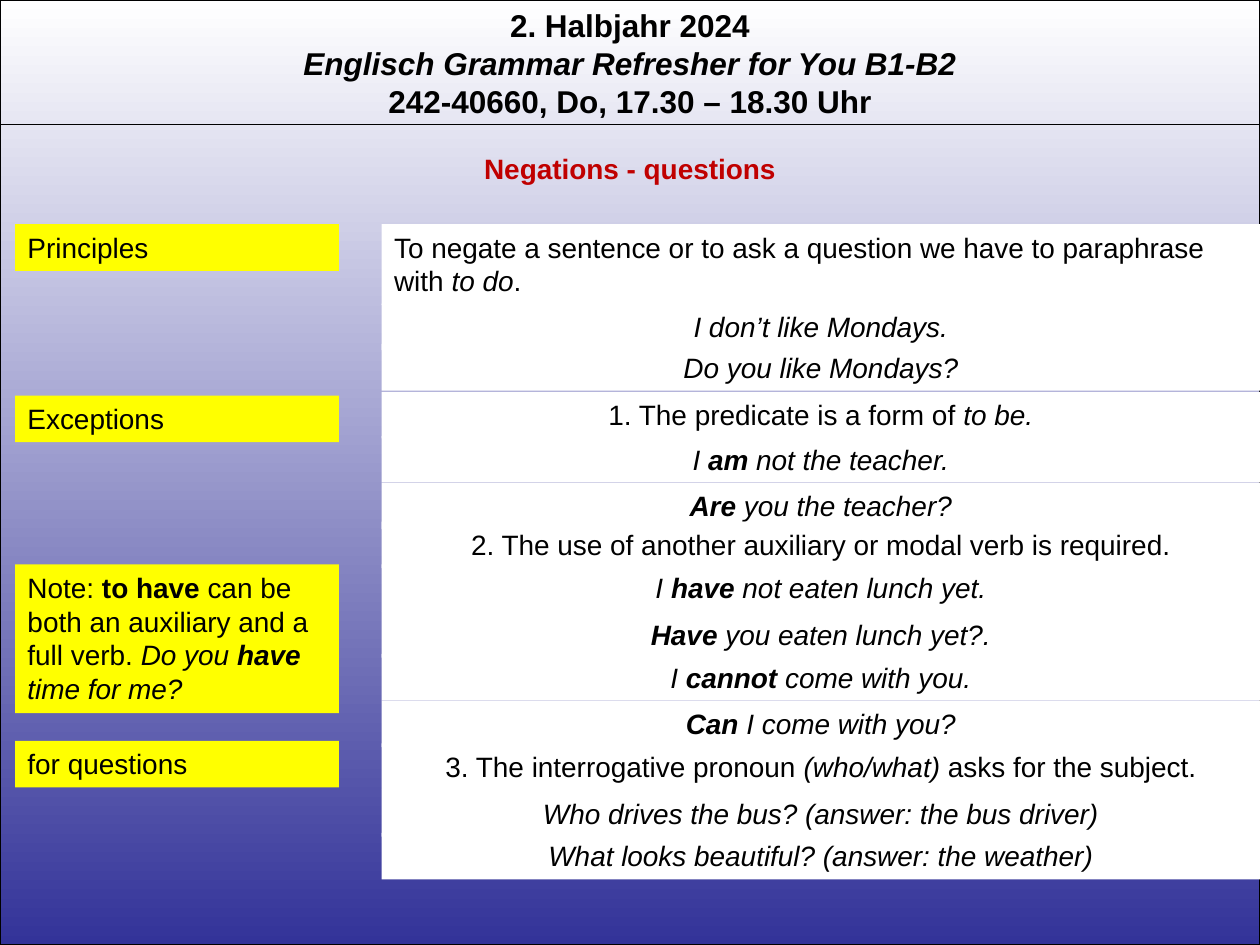
from dataclasses import dataclass

from lxml.etree import SubElement
from pptx import Presentation
from pptx.dml.color import RGBColor
from pptx.enum.shapes import MSO_CONNECTOR, MSO_SHAPE
from pptx.enum.text import MSO_ANCHOR, MSO_AUTO_SIZE, PP_ALIGN
from pptx.oxml.ns import qn
from pptx.util import Inches, Pt


@dataclass(frozen=True)
class Theme:
    font: str = "Arial"
    header_size: int = 18
    body_size: int = 16
    line_width: float = 0.75
    black: RGBColor = RGBColor(0x00, 0x00, 0x00)
    white: RGBColor = RGBColor(0xFF, 0xFF, 0xFF)
    blue: RGBColor = RGBColor(0x33, 0x33, 0x99)
    yellow: RGBColor = RGBColor(0xFF, 0xFF, 0x00)
    red: RGBColor = RGBColor(0xC0, 0x00, 0x00)


THEME = Theme()
SLIDE_W, SLIDE_H = 10, 7.5
LABEL_LEFT, LABEL_W = 0.12, 2.57
RULE_LEFT = 3.03
RULE_W = SLIDE_W - RULE_LEFT
LINE_H, PADDING = 0.27, 0.1

# A paragraph is a list of (text, style) runs; style holds "b" and/or "i".
HEADER = [
    [("2. Halbjahr 2024", "b")],
    [("Englisch Grammar Refresher for You B1-B2", "bi")],
    [("242-40660, Do, 17.30 – 18.30 Uhr", "b")],
]
TOPIC = [("Negations - questions", "b")]

# (top, number of lines, runs)
LABELS = [
    (1.78, 1, [("Principles", "")]),
    (3.14, 1, [("Exceptions", "")]),
    (4.48, 4, [("Note: ", ""), ("to have ", "b"),
               ("can be both an auxiliary and a full verb. ", ""),
               ("Do you ", "i"), ("have", "bi"), (" time for me?", "i")]),
    (5.88, 1, [("for questions", "")]),
]
PRINCIPLE = (1.78, 2, [
    ("To negate a sentence or to ask a question we have to paraphrase with ", ""),
    ("to do", "i"), (".", "")])
RULES = [
    (2.41, 1, [("I don’t like Mondays.", "i")]),
    (2.73, 1, [("Do you like Mondays?", "i")]),
    (3.11, 1, [("1. The predicate is a form of ", ""), ("to be.", "i")]),
    (3.46, 1, [("I ", "i"), ("am", "bi"), (" not the teacher.", "i")]),
    (3.83, 1, [("Are", "bi"), (" you the teacher?", "i")]),
    (4.14, 1, [("2. The use of another auxiliary or modal verb is required.", "")]),
    (4.48, 1, [("I ", "i"), ("have ", "bi"), ("not eaten lunch yet.", "i")]),
    (4.85, 1, [("Have ", "bi"), ("you eaten lunch yet?.", "i")]),
    (5.19, 1, [("I ", "i"), ("cannot ", "bi"), ("come with you.", "i")]),
    (5.56, 1, [("Can ", "bi"), ("I come with you?", "i")]),
    (5.90, 1, [("3. The interrogative pronoun ", ""), ("(who/what) ", "i"),
               ("asks for the subject.", "")]),
    (6.27, 1, [("Who drives the bus? (answer: the bus driver)", "i")]),
    (6.61, 1, [("What looks beautiful? (answer: the weather)", "i")]),
]


def write(shape, paragraphs, align, size=THEME.body_size, color=THEME.black):
    frame = shape.text_frame
    frame.word_wrap = True
    frame.auto_size = MSO_AUTO_SIZE.SHAPE_TO_FIT_TEXT
    frame.vertical_anchor = MSO_ANCHOR.TOP
    for index, runs in enumerate(paragraphs):
        paragraph = frame.paragraphs[0] if index == 0 else frame.add_paragraph()
        paragraph.alignment = align
        for text, style in runs:
            run = paragraph.add_run()
            run.text = text
            run.font.name = THEME.font
            run.font.size = Pt(size)
            run.font.color.rgb = color
            run.font.bold = "b" in style
            run.font.italic = "i" in style


def add_background(slide):
    background = slide.shapes.add_shape(
        MSO_SHAPE.RECTANGLE, 0, 0, Inches(SLIDE_W), Inches(SLIDE_H))
    background.shadow.inherit = False
    background.fill.gradient()
    background.fill.gradient_angle = 270
    for stop, color in zip(background.fill.gradient_stops, (THEME.white, THEME.blue)):
        stop.color.rgb = color
    background.line.color.rgb = THEME.black
    background.line.width = Pt(THEME.line_width)


def add_heading(slide, top, height, paragraphs, **style):
    heading = slide.shapes.add_textbox(0, Inches(top), Inches(SLIDE_W), Inches(height))
    write(heading, paragraphs, PP_ALIGN.CENTER, **style)


def add_header_rule(slide, top):
    rule = slide.shapes.add_connector(
        MSO_CONNECTOR.STRAIGHT, 0, Inches(top), Inches(SLIDE_W), Inches(top))
    rule.line.color.rgb = THEME.black
    rule.line.width = Pt(THEME.line_width)
    SubElement(rule._element.spPr, qn("a:effectLst"))


def add_box(slide, left, width, entry, fill, align):
    top, lines, runs = entry
    box = slide.shapes.add_shape(
        MSO_SHAPE.RECTANGLE, Inches(left), Inches(top),
        Inches(width), Inches(lines * LINE_H + PADDING))
    box.shadow.inherit = False
    box.fill.solid()
    box.fill.fore_color.rgb = fill
    box.line.fill.background()
    write(box, [runs], align)


def main():
    deck = Presentation()
    deck.slide_width, deck.slide_height = Inches(SLIDE_W), Inches(SLIDE_H)
    slide = deck.slides.add_slide(deck.slide_layouts[6])

    add_background(slide)
    add_heading(slide, 0, 1.01, HEADER, size=THEME.header_size)
    add_header_rule(slide, 0.99)
    add_heading(slide, 1.15, 0.37, [TOPIC], color=THEME.red)
    for label in LABELS:
        add_box(slide, LABEL_LEFT, LABEL_W, label, THEME.yellow, PP_ALIGN.LEFT)
    add_box(slide, RULE_LEFT, RULE_W, PRINCIPLE, THEME.white, PP_ALIGN.LEFT)
    for rule in RULES:
        add_box(slide, RULE_LEFT, RULE_W, rule, THEME.white, PP_ALIGN.CENTER)

    deck.save("out.pptx")


if __name__ == "__main__":
    main()
